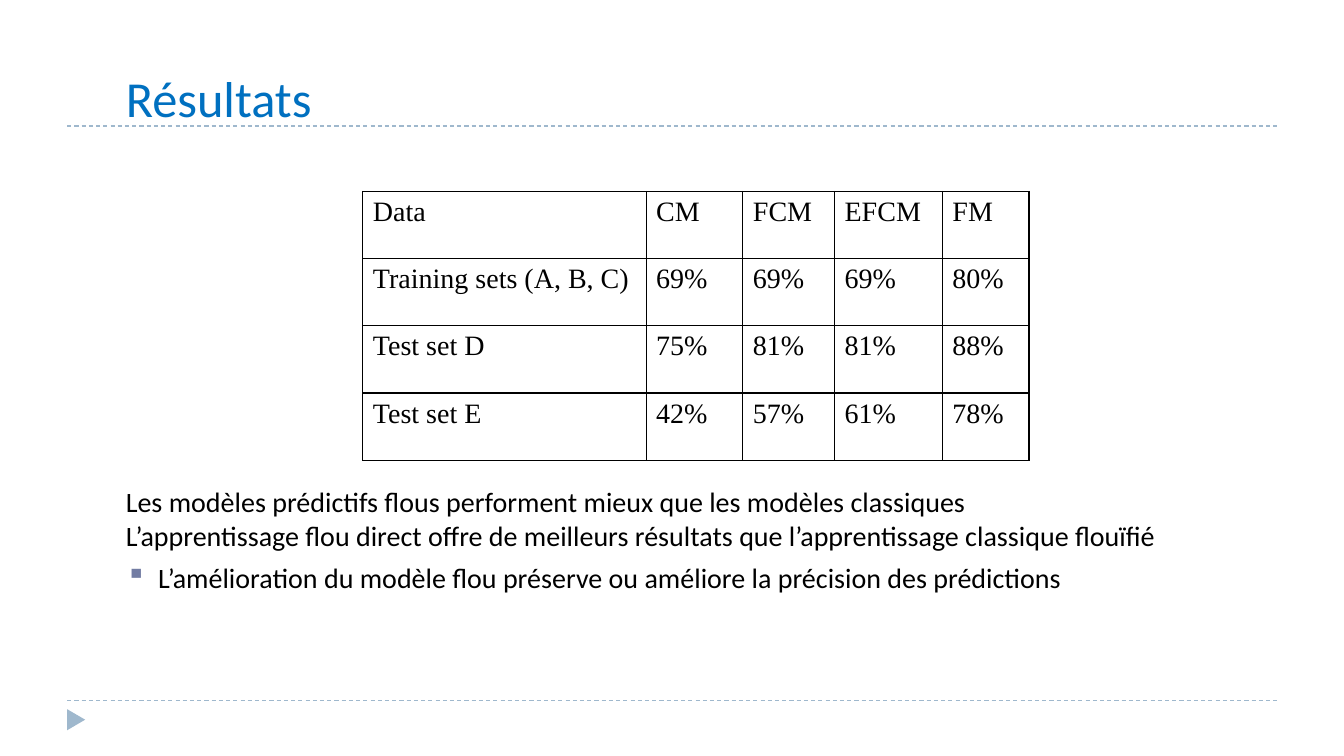
from lxml import etree
from pptx import Presentation
from pptx.dml.color import RGBColor
from pptx.enum.dml import MSO_LINE
from pptx.enum.shapes import MSO_CONNECTOR, MSO_SHAPE
from pptx.enum.text import MSO_ANCHOR
from pptx.oxml import parse_xml
from pptx.oxml.ns import nsdecls, qn
from pptx.util import Inches, Pt

DASH = MSO_LINE.DASH
STRAIGHT = MSO_CONNECTOR.STRAIGHT
TRIANGLE = MSO_SHAPE.ISOSCELES_TRIANGLE
MIDDLE = MSO_ANCHOR.MIDDLE
TOP = MSO_ANCHOR.TOP

BLACK = RGBColor(0x00, 0x00, 0x00)
TITLE_BLUE = RGBColor(0x00, 0x70, 0xC0)
RULE_BLUE = RGBColor(0x9F, 0xB8, 0xCD)
BULLET_VIOLET = RGBColor(0x72, 0x7C, 0xA3)

GRID_COLUMNS = 40
GRID_ROWS = 22.5
MARGIN = 2
TEXT_LEFT = 3.45
BULLET_INDENT = 0.96

TITLE_STYLE = {"name": "Calibri", "size": Pt(36)}
BODY_STYLE = {"name": "Calibri", "size": Pt(20)}
TABLE_STYLE = {"name": "Times New Roman", "size": Pt(20)}

RESULTS = [
    ["Data", "CM", "FCM", "EFCM", "FM"],
    ["Training sets (A, B, C)", "69%", "69%", "69%", "80%"],
    ["Test set D", "75%", "81%", "81%", "88%"],
    ["Test set E", "42%", "57%", "61%", "78%"],
]
RESULT_WIDTHS = [8.43, 2.88, 2.73, 3.21, 2.58]
RESULT_HEIGHT = 2

FINDINGS = [
    ("Les modèles prédictifs flous performent mieux que les modèles classiques", False),
    ("L’apprentissage flou direct offre de meilleurs résultats que "
     "l’apprentissage classique flouïfié", False),
    ("L’amélioration du modèle flou préserve ou améliore la précision des prédictions", True),
]


class GridPage:
    """Draws styled elements on one slide, measured in grid columns and rows."""

    def __init__(self, deck):
        self.page = deck.slides.add_slide(deck.slide_layouts[6])
        self.column = deck.slide_width / GRID_COLUMNS
        self.row = deck.slide_height / GRID_ROWS

    def place(self, left, top, width, height):
        return [round(left * self.column), round(top * self.row),
                round(width * self.column), round(height * self.row)]

    def add_span(self, para, text, style, color):
        span = para.add_run()
        span.text = text
        for name, value in style.items():
            setattr(span.font, name, value)
        span.font.color.rgb = color

    def rule(self, top):
        left, level, right, _ = self.place(MARGIN, top, GRID_COLUMNS - MARGIN, 0)
        line = self.page.shapes.add_connector(STRAIGHT, left, level, right, level)
        for name, value in {"width": Pt(0.75), "dash_style": DASH}.items():
            setattr(line.line, name, value)
        line.line.color.rgb = RULE_BLUE
        etree.SubElement(line._element.spPr, qn("a:effectLst"))

    def marker(self, left, top, width, height):
        arrow = self.page.shapes.add_shape(TRIANGLE, *self.place(left, top, width, height))
        arrow.rotation = 90
        arrow.shadow.inherit = False
        arrow.fill.solid()
        arrow.fill.fore_color.rgb = RULE_BLUE
        arrow.line.fill.background()

    def text(self, bounds, items, style, color, anchor):
        box = self.page.shapes.add_textbox(*self.place(*bounds))
        frame = box.text_frame
        for name, value in {"word_wrap": True, "vertical_anchor": anchor}.items():
            setattr(frame, name, value)
        for index, (text, bulleted) in enumerate(items):
            para = frame.add_paragraph() if index else frame.paragraphs[0]
            self.add_span(para, text, style, color)
            if bulleted:
                self.bullet(para)

    def bullet(self, para):
        para.space_before = Pt(6)
        indent = round(BULLET_INDENT * self.column)
        properties = para._p.get_or_add_pPr()
        properties.set("marL", str(indent))
        properties.set("indent", str(-indent))
        tint = etree.SubElement(properties, qn("a:buClr"))
        etree.SubElement(tint, qn("a:srgbClr"), val=str(BULLET_VIOLET))
        etree.SubElement(properties, qn("a:buChar"), char="▪")

    def table(self, left, top, widths, height, rows):
        bounds = self.place(left, top, sum(widths), height * len(rows))
        grid = self.page.shapes.add_table(len(rows), len(widths), *bounds).table
        for name in ("first_row", "horz_banding"):
            setattr(grid, name, False)
        for column, width in zip(grid.columns, widths):
            column.width = round(width * self.column)
        for row, values in zip(grid.rows, rows):
            row.height = round(height * self.row)
            for cell, value in zip(row.cells, values):
                self.add_span(cell.text_frame.paragraphs[0], value, TABLE_STYLE, BLACK)
                self.border(cell)
                cell.fill.background()

    def border(self, cell):
        properties = cell._tc.get_or_add_tcPr()
        for side in ("lnL", "lnR", "lnT", "lnB"):
            properties.append(parse_xml(
                f'<a:{side} {nsdecls("a")} w="{Pt(1)}"><a:solidFill>'
                f'<a:srgbClr val="{BLACK}"/></a:solidFill></a:{side}>'))


def main():
    deck = Presentation()
    deck.slide_width = Inches(40 / 3)
    deck.slide_height = Inches(7.5)
    results = GridPage(deck)
    for top in (20.85, 3.75):
        results.rule(top)
    results.marker(1.95, 21.15, 0.63, 0.54)
    results.text((TEXT_LEFT, 0.72, 33.81, 4.35), [("Résultats", False)],
                 TITLE_STYLE, TITLE_BLUE, MIDDLE)
    results.table(10.8, 5.7, RESULT_WIDTHS, RESULT_HEIGHT, RESULTS)
    results.text((TEXT_LEFT, 14.28, 33.12, 3.84), FINDINGS, BODY_STYLE, BLACK, TOP)
    deck.save("out.pptx")


if __name__ == "__main__":
    main()
